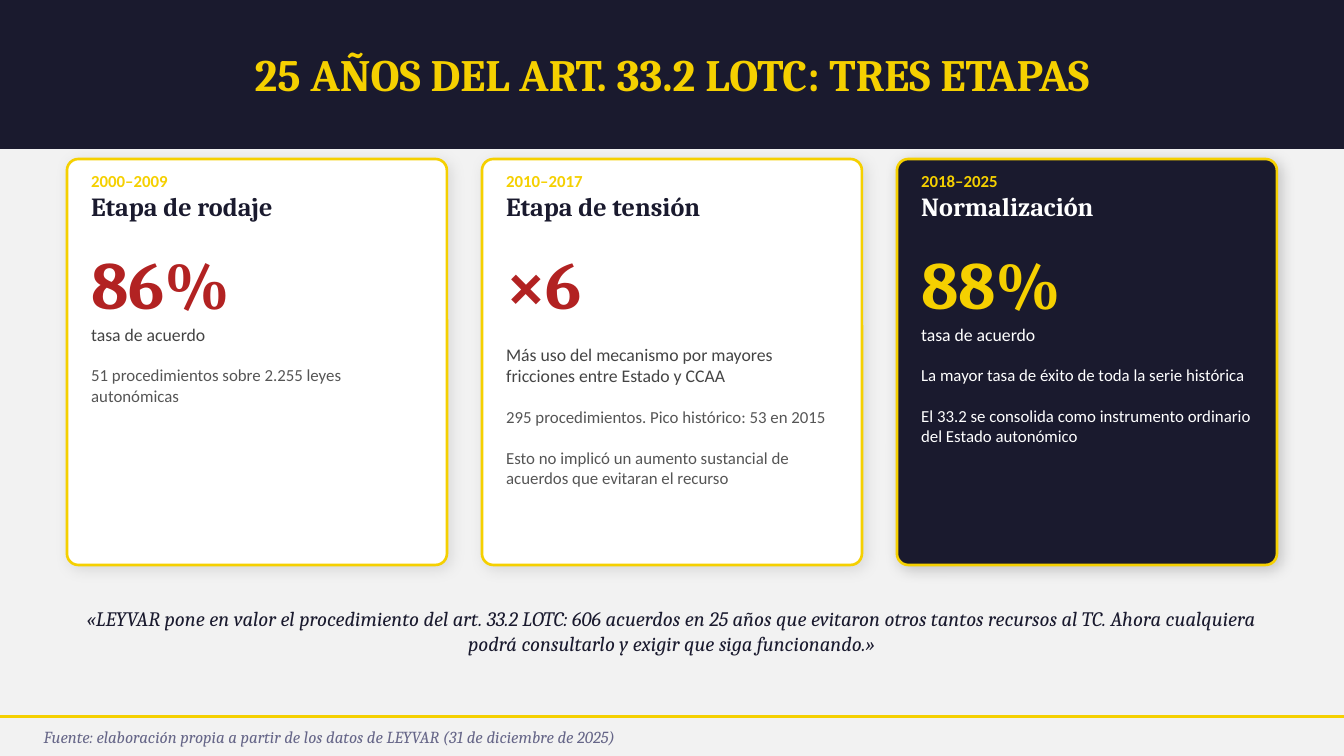
from dataclasses import dataclass

from lxml import etree
from pptx import Presentation
from pptx import util as u
from pptx.dml.color import RGBColor
from pptx.enum import shapes, text
from pptx.oxml.ns import qn


@dataclass(frozen=True)
class Theme:
    back: str = "F2F2F2"
    navy: str = "1A1A2E"
    gold: str = "F5D000"
    white: str = "FFFFFF"
    red: str = "B22222"
    grey: str = "666688"
    serif: str = "Cambria"
    sans: str = "Calibri"
    title: float = 24
    quote: float = 11
    small: float = 9
    gap: float = 11


T = Theme()

# role: font, size, bold, colour on a light card, colour on a dark card
ROLES = {
    "years": (T.sans, T.small, True, T.gold, T.gold),
    "name": (T.serif, 14, True, T.navy, T.white),
    "figure": (T.serif, 36, True, T.red, T.gold),
    "label": (T.sans, 9.5, False, "444444", T.white),
    "note": (T.sans, T.small, False, "555555", T.white),
}

TITLE = "25 AÑOS DEL ART. 33.2 LOTC: TRES ETAPAS"
QUOTE = ("«LEYVAR pone en valor el procedimiento del art. 33.2 LOTC: 606 acuerdos "
         "en 25 años que evitaron otros tantos recursos al TC. Ahora cualquiera "
         "podrá consultarlo y exigir que siga funcionando.»")
SOURCE = ("Fuente: elaboración propia a partir de los datos de LEYVAR "
          "(31 de diciembre de 2025)")

# each card: dark or not, shadow strength in %, lines of (role, words, gap above)
CARDS = [
    (False, 10, [
        ("years", "2000–2009", False),
        ("name", "Etapa de rodaje", False),
        ("figure", "86%", True),
        ("label", "tasa de acuerdo", False),
        ("note", "51 procedimientos sobre 2.255 leyes autonómicas", True),
    ]),
    (False, 10, [
        ("years", "2010–2017", False),
        ("name", "Etapa de tensión", False),
        ("figure", "×6", True),
        ("label", "Más uso del mecanismo por mayores fricciones entre Estado y CCAA", True),
        ("note", "295 procedimientos. Pico histórico: 53 en 2015", True),
        ("note", "Esto no implicó un aumento sustancial de acuerdos que evitaran el recurso", True),
    ]),
    (True, 20, [
        ("years", "2018–2025", False),
        ("name", "Normalización", False),
        ("figure", "88%", True),
        ("label", "tasa de acuerdo", False),
        ("note", "La mayor tasa de éxito de toda la serie histórica", True),
        ("note", "El 33.2 se consolida como instrumento ordinario del Estado autonómico", True),
    ]),
]

WIDE, HIGH = 1344, 756
EDGE, SPAN = 67, 1210
TOP, CARD_W, CARD_H = 159, 380, 406
PAD_X, PAD_Y = 11, 5


def px(n):
    return u.Emu(round(n * 9144000 / WIDE))


def rgb(code):
    return RGBColor.from_string(code)


def add_block(slide, kind, at, fill, line, width=1):
    block = slide.shapes.add_shape(kind, *map(px, at))
    block.fill.solid()
    block.fill.fore_color.rgb = rgb(fill)
    block.line.color.rgb = rgb(line)
    block.line.width = u.Pt(width)
    block.shadow.inherit = False
    return block


def cast(block, alpha):
    """Give the block a soft shadow of the given strength in percent."""
    effects = block._element.spPr.find(qn("a:effectLst"))
    shade = etree.SubElement(effects, qn("a:outerShdw"), blurRad=str(u.Pt(8)),
                             dist=str(u.Pt(2)), dir="2700000",
                             algn="bl", rotWithShape="0")
    tint = etree.SubElement(shade, qn("a:srgbClr"), val="000000")
    etree.SubElement(tint, qn("a:alpha"), val=str(alpha * 1000))


def add_frame(slide, at):
    frame = slide.shapes.add_textbox(*map(px, at)).text_frame
    frame.word_wrap = True
    return frame


def add_run(para, words, face, size, ink, bold=False, italic=False):
    run = para.add_run()
    run.text = words
    font = run.font
    font.name, font.size = face, u.Pt(size)
    font.bold, font.italic = bold, italic
    font.color.rgb = rgb(ink)


def add_line(slide, at, words, size, ink, **style):
    """Put one serif paragraph in the middle of its box."""
    frame = add_frame(slide, at)
    frame.vertical_anchor = text.MSO_ANCHOR.MIDDLE
    para = frame.paragraphs[0]
    para.alignment = text.PP_ALIGN.CENTER
    add_run(para, words, T.serif, size, ink, **style)


def add_card(slide, left, dark, alpha, lines):
    card = add_block(slide, shapes.MSO_SHAPE.ROUNDED_RECTANGLE,
                     (left, TOP, CARD_W, CARD_H),
                     T.navy if dark else T.white, T.gold, 1.42)
    card.adjustments[0] = 0.03
    cast(card, alpha)
    frame = add_frame(slide, (left + PAD_X, TOP + PAD_Y,
                              CARD_W - 2 * PAD_X, CARD_H - 2 * PAD_Y))
    for i, (role, words, gap) in enumerate(lines):
        para = frame.add_paragraph() if i else frame.paragraphs[0]
        para.space_before = u.Pt(T.gap if gap else 0)
        face, size, bold, light, pale = ROLES[role]
        add_run(para, words, face, size, pale if dark else light, bold)


def main():
    deck = Presentation()
    deck.slide_width, deck.slide_height = px(WIDE), px(HIGH)
    slide = deck.slides.add_slide(deck.slide_layouts[6])
    slide.background.fill.solid()
    slide.background.fill.fore_color.rgb = rgb(T.back)

    box = shapes.MSO_SHAPE.RECTANGLE
    add_block(slide, box, (0, 0, WIDE, 148), T.navy, T.navy)
    add_line(slide, (EDGE, 27, SPAN, 94), TITLE, T.title, T.gold, bold=True)

    step = (SPAN - CARD_W) / (len(CARDS) - 1)
    for i, card in enumerate(CARDS):
        add_card(slide, EDGE + i * step, *card)

    add_line(slide, (EDGE, 579, SPAN, 103), QUOTE, T.quote, T.navy, italic=True)
    add_block(slide, box, (0, 716, WIDE, 1), T.gold, T.gold)
    add_line(slide, (0, 724, 658, 26), SOURCE, T.small, T.grey, italic=True)
    deck.save("out.pptx")


if __name__ == "__main__":
    main()
